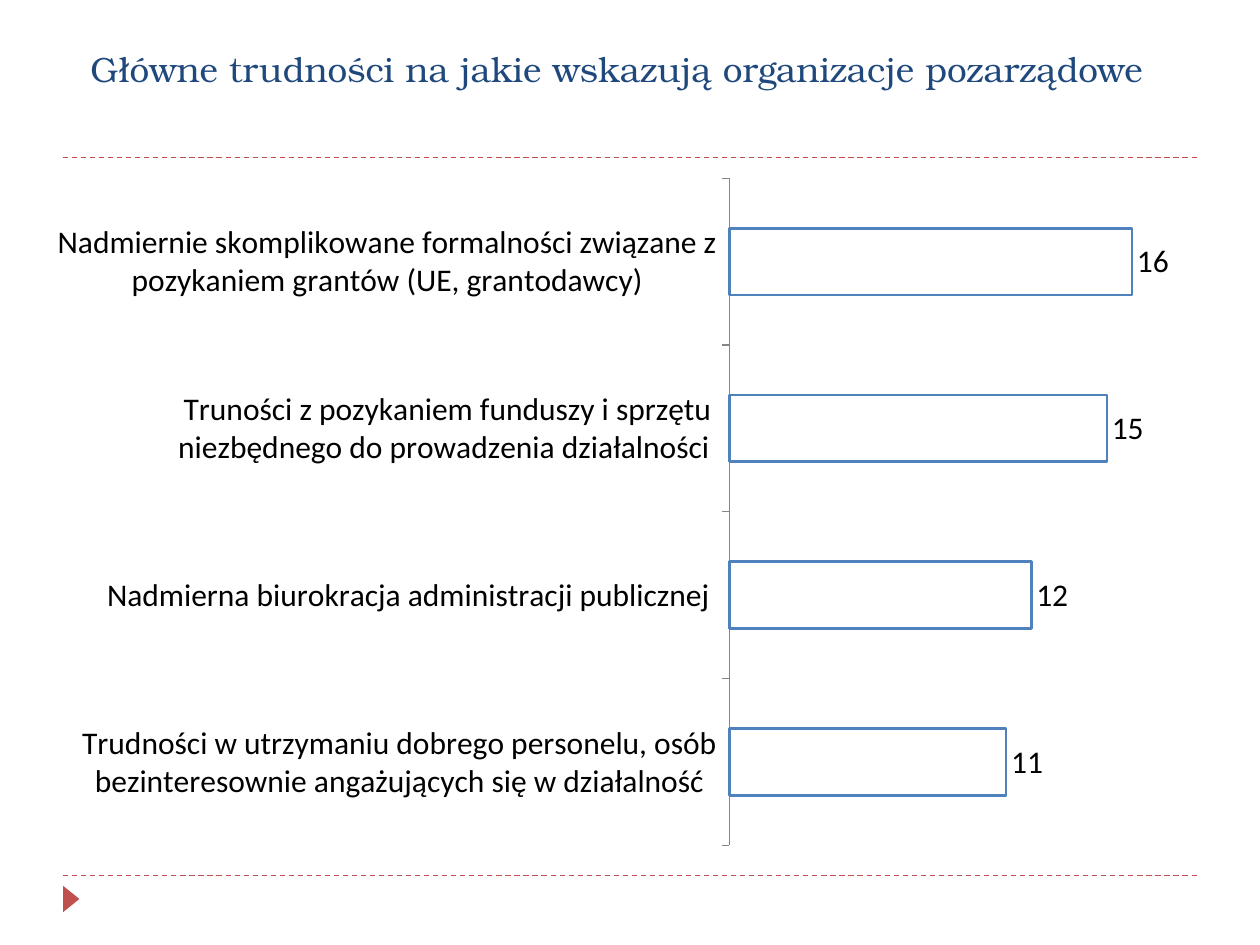
from dataclasses import dataclass

from lxml.etree import SubElement
from pptx import Presentation
from pptx.chart.data import CategoryChartData
from pptx.dml.color import RGBColor
from pptx.enum.chart import XL_CHART_TYPE, XL_LABEL_POSITION, XL_TICK_LABEL_POSITION, XL_TICK_MARK
from pptx.enum.dml import MSO_LINE
from pptx.enum.shapes import MSO_CONNECTOR, MSO_SHAPE
from pptx.enum.text import MSO_ANCHOR, PP_ALIGN
from pptx.oxml import parse_xml
from pptx.oxml.ns import nsdecls, qn
from pptx.util import Inches, Pt


@dataclass(frozen=True)
class Theme:
    title_color: RGBColor = RGBColor(0x1F, 0x49, 0x7D)
    accent: RGBColor = RGBColor(0xC0, 0x50, 0x4D)
    bar_fill: RGBColor = RGBColor(0xFF, 0xFF, 0xFF)
    bar_line: RGBColor = RGBColor(0x4F, 0x81, 0xBD)
    axis_line: RGBColor = RGBColor(0x86, 0x86, 0x86)
    text: RGBColor = RGBColor(0, 0, 0)
    title_font: str = "TeX Gyre Bonum"
    body_font: str = "Calibri"
    title_size: Pt = Pt(20)
    chart_size: Pt = Pt(18)


THEME = Theme()

DIFFICULTIES = {
    "Trudności w utrzymaniu dobrego personelu, osób bezinteresownie angażujących się w działalność": 11,
    "Nadmierna biurokracja administracji publicznej ": 12,
    "Truności z pozykaniem funduszy i sprzętu niezbędnego do prowadzenia działalności ": 15,
    "Nadmiernie skomplikowane formalności związane z pozykaniem grantów (UE, grantodawcy)": 16,
}


def add_text(page, box, text, *, font, size, color, align, anchor):
    frame = page.shapes.add_textbox(*box).text_frame
    frame.word_wrap = True
    frame.vertical_anchor = anchor
    para = frame.paragraphs[0]
    para.alignment = align
    span = para.add_run()
    span.text = text
    span.font.name = font
    span.font.size = size
    span.font.color.rgb = color


def add_frame_lines(page, box):
    """Dashed rules along the top and bottom of the box, with a marker under the lower one."""
    left, top, width, height = box
    for y in (top, top + height):
        rule = page.shapes.add_connector(MSO_CONNECTOR.STRAIGHT, left, y, left + width, y)
        rule.line.color.rgb = THEME.accent
        rule.line.width = Pt(0.75)
        rule.line.dash_style = MSO_LINE.DASH
        SubElement(rule._element.spPr, qn("a:effectLst"))

    marker = page.shapes.add_shape(
        MSO_SHAPE.ISOSCELES_TRIANGLE,
        left - Inches(0.04), top + height + Inches(0.12), Inches(0.21), Inches(0.13))
    marker.rotation = 90
    marker.shadow.inherit = False
    marker.fill.solid()
    marker.fill.fore_color.rgb = THEME.accent
    marker.line.fill.background()


def set_plot_area(chart, **fractions):
    """Fix the inner plot area as fractions of the chart's size."""
    plot_area = chart._chartSpace.chart.plotArea
    for old in plot_area.findall(qn("c:layout")):
        plot_area.remove(old)
    values = "".join(f'<c:{key} val="{value}"/>' for key, value in fractions.items())
    plot_area.insert(0, parse_xml(
        f'<c:layout {nsdecls("c")}><c:manualLayout><c:layoutTarget val="inner"/>'
        f'<c:xMode val="edge"/><c:yMode val="edge"/>{values}</c:manualLayout></c:layout>'))


def add_difficulty_chart(page, box):
    data = CategoryChartData()
    data.categories = list(DIFFICULTIES)
    data.add_series("Series 1", list(DIFFICULTIES.values()))
    chart = page.shapes.add_chart(XL_CHART_TYPE.BAR_CLUSTERED, *box, data).chart
    chart.has_legend = False
    chart.has_title = False
    chart.font.name = THEME.body_font
    chart.font.size = THEME.chart_size
    chart.font.color.rgb = THEME.text
    set_plot_area(chart, x=0.593, y=0.019, w=0.387, h=0.961)

    scale = chart.value_axis
    scale.minimum_scale = 0
    scale.maximum_scale = 18
    scale.has_major_gridlines = False
    scale.visible = False

    axis = chart.category_axis
    axis.major_tick_mark = XL_TICK_MARK.OUTSIDE
    axis.minor_tick_mark = XL_TICK_MARK.NONE
    axis.tick_label_position = XL_TICK_LABEL_POSITION.NEXT_TO_AXIS
    axis.format.line.color.rgb = THEME.axis_line
    axis.format.line.width = Pt(0.75)

    plot = chart.plots[0]
    plot.gap_width = 150
    plot.vary_by_categories = False
    bars = plot.series[0]
    bars.invert_if_negative = False
    bars.format.fill.solid()
    bars.format.fill.fore_color.rgb = THEME.bar_fill
    bars.format.line.color.rgb = THEME.bar_line
    bars.format.line.width = Pt(1.5)
    bars.data_labels.show_value = True
    bars.data_labels.position = XL_LABEL_POSITION.OUTSIDE_END


def main():
    deck = Presentation()
    deck.slide_width, deck.slide_height = Inches(10), Inches(7.5)
    page = deck.slides.add_slide(deck.slide_layouts[6])
    add_frame_lines(page, (Inches(0.5), Inches(1.25), Inches(9), Inches(5.7)))
    add_text(page, (Inches(0), Inches(0.17), Inches(9.88), Inches(0.59)),
             "Główne trudności na jakie wskazują organizacje pozarządowe ",
             font=THEME.title_font, size=THEME.title_size, color=THEME.title_color,
             align=PP_ALIGN.CENTER, anchor=MSO_ANCHOR.BOTTOM)
    add_difficulty_chart(page, (Inches(0.28), Inches(1.31), Inches(9.29), Inches(5.51)))
    deck.save("out.pptx")


if __name__ == "__main__":
    main()
